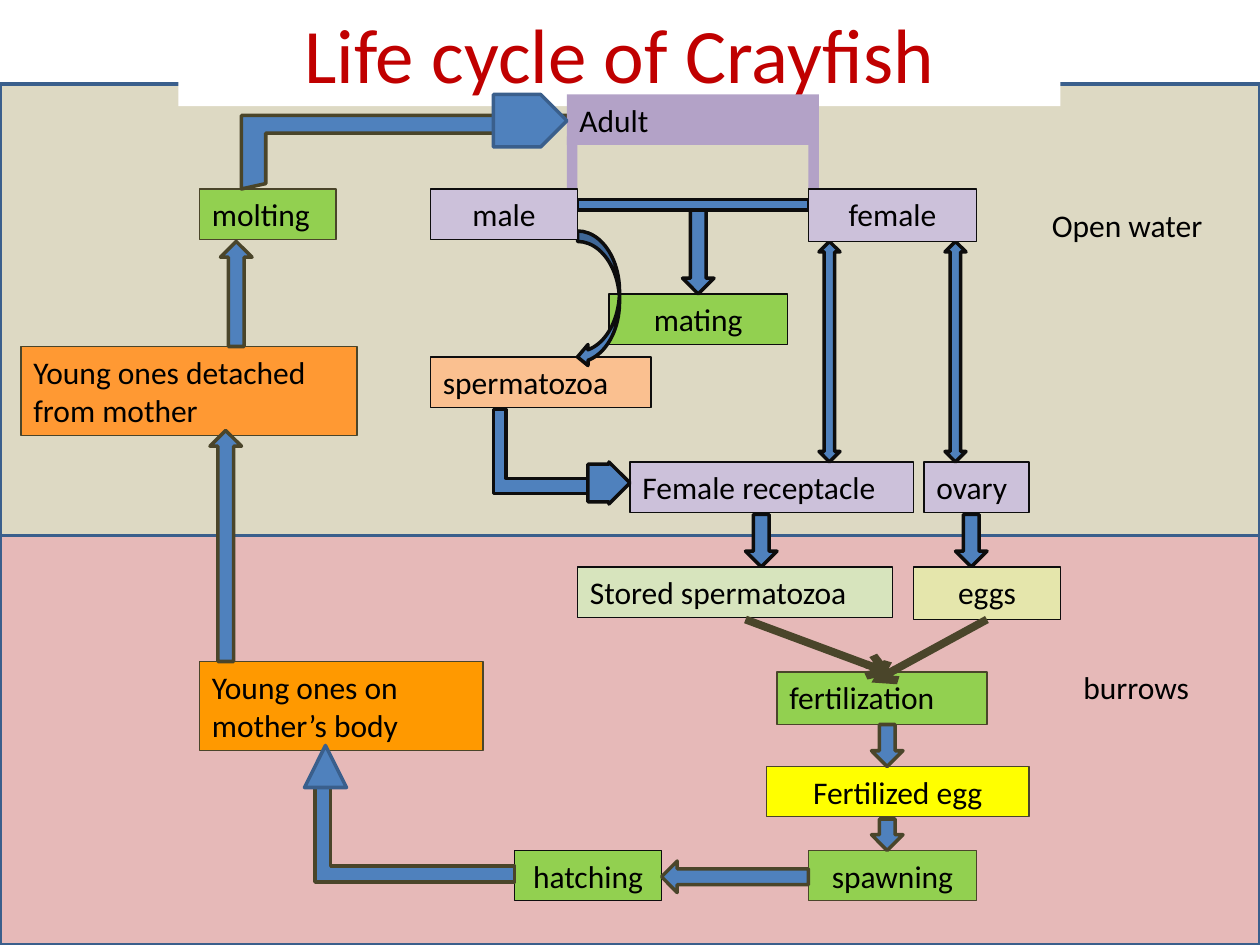
import dataclasses

import pptx
import pptx.dml.color
import pptx.enum.shapes
import pptx.enum.text
import pptx.oxml.ns
import pptx.util
from lxml import etree

SCALE = 7620
KIND = pptx.enum.shapes.MSO_SHAPE
ALIGN = pptx.enum.text.PP_ALIGN
LEFT, MID = ALIGN.LEFT, ALIGN.CENTER


@dataclasses.dataclass(frozen=True)
class Theme:
    font: str = "Calibri"
    head: int = 44
    body: int = 18
    thin: float = 0.75
    edge: float = 2
    bold: float = 4.5
    black: str = "000000"
    white: str = "FFFFFF"
    red: str = "C00000"
    ink: str = "0D0D0D"
    brown: str = "4A452A"
    navy: str = "3A5F8C"
    blue: str = "4F81BD"
    sand: str = "DDD9C3"
    rose: str = "E6B9B8"
    green: str = "92D050"
    peach: str = "FAC090"
    lilac: str = "CCC1DA"
    purple: str = "B3A2C7"
    orange: str = "FF9900"
    amber: str = "FF9933"
    mint: str = "D7E4BD"
    cream: str = "E5E6AC"
    yellow: str = "FFFF00"


T = Theme()


def rgb(code):
    return pptx.dml.color.RGBColor.from_string(code)


def place(box, x, y, w, h):
    return [n * SCALE for n in (box[0] + x, box[1] + y, w, h)]


def write(shape, text, align, size=T.body, color=T.black):
    frame = shape.text_frame
    frame.text = text
    frame.word_wrap = True
    frame.auto_size = pptx.enum.text.MSO_AUTO_SIZE.SHAPE_TO_FIT_TEXT
    frame.vertical_anchor = pptx.enum.text.MSO_ANCHOR.TOP
    para = frame.paragraphs[0]
    para.alignment = align
    font = para.runs[0].font
    font.name, font.size = T.font, pptx.util.Pt(size)
    font.color.rgb = rgb(color)


def draw(slide, box, kind, spot, fill=T.blue, line=T.ink, width=T.edge, adj=()):
    shape = slide.shapes.add_shape(kind, *place(box, *spot))
    shape.shadow.inherit = False
    shape.fill.solid()
    shape.fill.fore_color.rgb = rgb(fill)
    if line:
        shape.line.color.rgb = rgb(line)
        shape.line.width = pptx.util.Pt(width)
    else:
        shape.line.fill.background()
    for i, value in enumerate(adj):
        shape.adjustments[i] = value
    return shape


def label(slide, box, text, spot, fill, line=T.ink, align=LEFT):
    shape = draw(slide, box, KIND.RECTANGLE, spot, fill, line, T.thin)
    write(shape, text, align)
    return shape


def link(slide, box, start, end):
    x1, y1, x2, y2 = place(box, *start, 0, 0)[:2] + place(box, *end, 0, 0)[:2]
    line = slide.shapes.add_connector(
        pptx.enum.shapes.MSO_CONNECTOR.STRAIGHT, x1, y1, x2, y2)
    line.line.color.rgb = rgb(T.brown)
    line.line.width = pptx.util.Pt(T.bold)
    qn = pptx.oxml.ns.qn
    props = line._element.spPr
    etree.SubElement(props.find(qn("a:ln")), qn("a:tailEnd"), type="arrow")
    etree.SubElement(props, qn("a:effectLst"))
    return line


def band(slide, box, fill):
    draw(slide, box, KIND.RECTANGLE, (0, 0, *box[2:]), fill, T.navy)


def note(slide, box, text, spot):
    write(slide.shapes.add_textbox(*place(box, *spot)), text, LEFT)


def title(slide, box):
    shape = slide.shapes.title
    shape.left, shape.top, shape.width, shape.height = place(box, 0, 0, *box[2:])
    shape.fill.solid()
    shape.fill.fore_color.rgb = rgb(T.white)
    write(shape, "Life cycle of Crayfish", MID, T.head, T.red)
    slide.shapes._spTree.append(shape._element)


def mating(slide, box):
    label(slide, box, "mating", (170, 100, 170, 48), T.green, align=MID)
    label(slide, box, "spermatozoa", (0, 160, 210, 48), T.peach)
    label(slide, box, "Female receptacle", (190, 260, 270, 48), T.lilac)
    label(slide, box, "ovary", (470, 260, 100, 48), T.lilac)
    draw(slide, box, KIND.DOWN_ARROW, (240, 20, 30, 80))
    draw(slide, box, KIND.CURVED_LEFT_ARROW, (140, 40, 40, 130))
    for x in (370, 490):
        draw(slide, box, KIND.UP_DOWN_ARROW, (x, 50, 20, 210))
    draw(slide, box, KIND.CORNER, (60, 210, 100, 80), adj=(0.18, 0.15))
    draw(slide, box, KIND.RIGHT_ARROW, (150, 260, 40, 40), adj=(0.9, 0.5))
    draw(slide, box, KIND.RECTANGLE, (140, 10, 220, 10))


def eggs(slide, box):
    for x in (220, 420):
        draw(slide, box, KIND.DOWN_ARROW, (x, 0, 30, 50))
    label(slide, box, "Stored spermatozoa", (60, 50, 300, 48), T.mint)
    egg = label(slide, box, "eggs", (380, 50, 140, 50), T.cream, align=MID)
    label(slide, box, "fertilization", (250, 150, 200, 50), T.green, T.brown)
    link(slide, box, (220, 100), (360, 152))
    link(slide, box, (450, 100), (340, 160)).begin_connect(egg, 2)
    label(slide, box, "Fertilized egg", (240, 240, 250, 48), T.yellow, T.brown, MID)
    label(slide, box, "spawning", (280, 320, 160, 48), T.green, T.brown, MID)
    label(slide, box, "hatching", (0, 320, 140, 48), T.green, align=MID)
    for y, h in ((200, 40), (290, 30)):
        draw(slide, box, KIND.DOWN_ARROW, (340, y, 30, h), line=T.brown)
    draw(slide, box, KIND.LEFT_ARROW, (140, 330, 140, 30), line=T.brown)


def young(slide, box):
    label(slide, box, "Young ones on mother’s body", (170, 520, 270, 85),
          T.orange, T.brown)
    label(slide, box, "Young ones detached from mother", (0, 220, 320, 85),
          T.amber, T.brown)
    label(slide, box, "molting", (170, 70, 130, 48), T.green, T.brown)
    draw(slide, box, KIND.CORNER, (280, 630, 190, 100), line=T.brown,
         adj=(0.15, 0.15))
    draw(slide, box, KIND.ISOSCELES_TRIANGLE, (270, 600, 40, 40), line=T.navy)
    for x, y, h in ((180, 300, 220), (190, 120, 100)):
        draw(slide, box, KIND.UP_ARROW, (x, y, 30, h), line=T.brown)
    draw(slide, box, KIND.HALF_FRAME, (210, 0, 320, 70), line=T.brown,
         adj=(0.24, 0.33))


def adult(slide, box):
    for x in (130, 360):
        draw(slide, box, KIND.RECTANGLE, (x, 40, 10, 50), T.purple, None)
    label(slide, box, "Adult", (130, 0, 240, 48), T.purple, None)
    label(slide, box, "female", (360, 90, 160, 50), T.lilac, align=MID)
    label(slide, box, "male", (0, 90, 140, 48), T.lilac, align=MID)
    draw(slide, box, KIND.PENTAGON, (60, 0, 70, 50), line=T.navy)


def main():
    deck = pptx.Presentation()
    deck.slide_width, deck.slide_height = 1200 * SCALE, 900 * SCALE
    slide = deck.slides.add_slide(deck.slide_layouts[5])
    water, burrow = (0, 80, 1200, 430), (0, 510, 1200, 390)
    band(slide, burrow, T.rose)
    band(slide, water, T.sand)
    title(slide, (170, 0, 840, 101))
    mating(slide, (410, 180, 570, 310))
    eggs(slide, (490, 490, 520, 370))
    young(slide, (20, 110, 530, 730))
    adult(slide, (410, 90, 520, 140))
    note(slide, water, "Open water", (990, 110, 190, 48))
    note(slide, burrow, "burrows", (1020, 120, 160, 50))
    deck.save("out.pptx")


if __name__ == "__main__":
    main()
